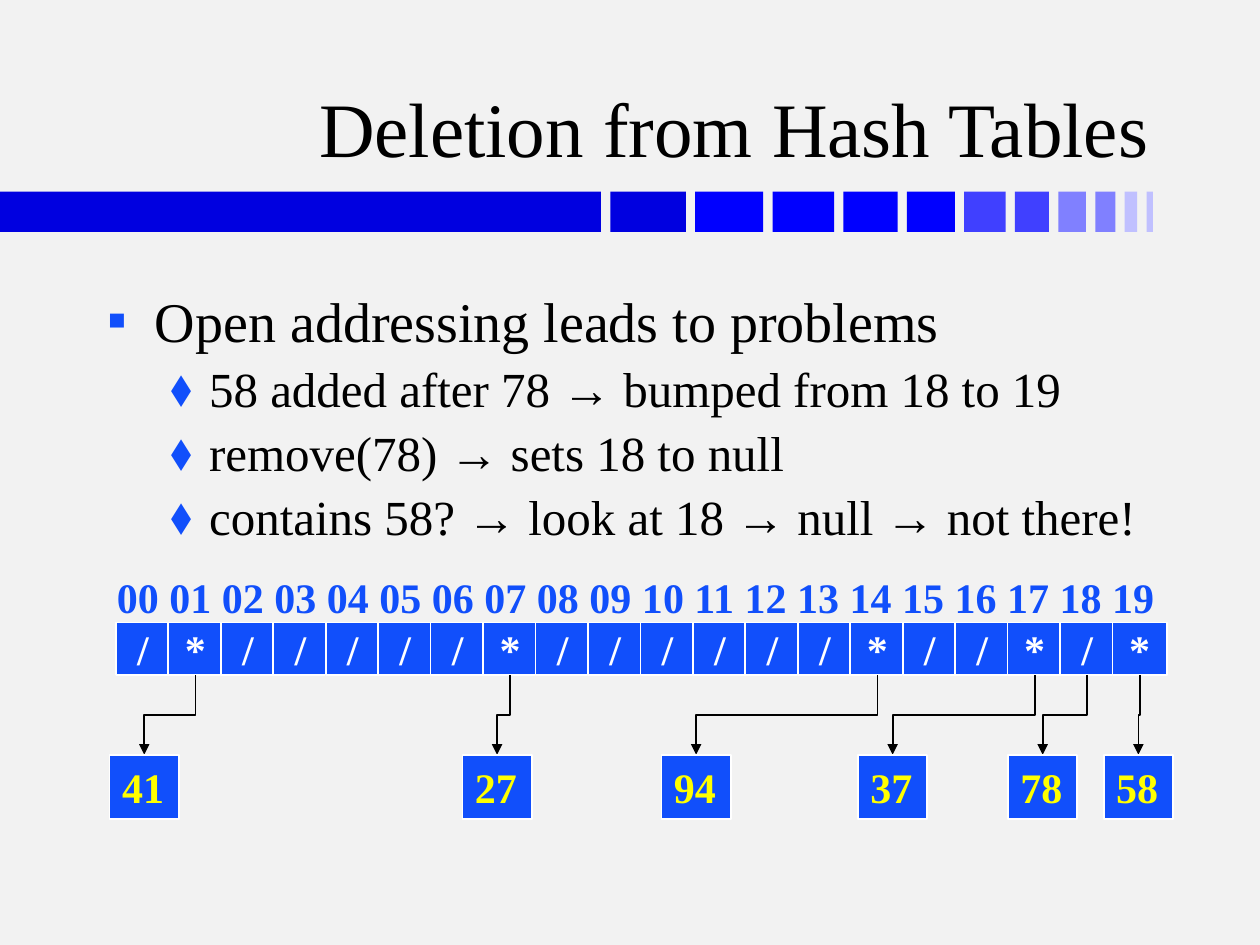
from dataclasses import dataclass

from lxml import etree
from pptx import Presentation
from pptx.dml.color import RGBColor
from pptx.enum.shapes import MSO_CONNECTOR, MSO_SHAPE
from pptx.enum.text import MSO_ANCHOR, MSO_AUTO_SIZE, PP_ALIGN
from pptx.oxml.ns import qn
from pptx.util import Inches, Pt

ELBOW = MSO_CONNECTOR.ELBOW
RECTANGLE = MSO_SHAPE.RECTANGLE
BOTTOM, MIDDLE = MSO_ANCHOR.BOTTOM, MSO_ANCHOR.MIDDLE
NO_FIT, GROW = MSO_AUTO_SIZE.NONE, MSO_AUTO_SIZE.SHAPE_TO_FIT_TEXT
LEFT, CENTER, RIGHT = PP_ALIGN.LEFT, PP_ALIGN.CENTER, PP_ALIGN.RIGHT


@dataclass(frozen=True)
class Theme:
    """Colours, typeface and type sizes of the slide."""
    face: str = "Times New Roman"
    background: str = "F2F2F2"
    text: str = "000000"
    accent: str = "114FFB"
    inverse: str = "FFFFFF"
    key: str = "FFFF00"
    band: tuple = ("0000E0", "0000E0", "0000FF", "0000FF", "0000FF", "0000FF",
                   "4040FF", "4040FF", "8080FF", "8080FF", "C0C0FF", "C0C0FF")
    title_size: int = 44
    body_sizes: tuple = (32, 28)
    table_size: int = 24
    line_width: int = 1


THEME = Theme()

BAND_WIDTHS = (4.77, 0.6, 0.54, 0.49, 0.43, 0.38, 0.33, 0.27, 0.22, 0.16, 0.1, 0.05)
BULLETS = (("▪", 0.38, 0.38), ("⬧", 0.81, 0.31))
POINTS = (
    (0, "Open addressing leads to problems"),
    (1, "58 added after 78 → bumped from 18 to 19"),
    (1, "remove(78) → sets 18 to null"),
    (1, "contains 58? → look at 18 → null → not there!"),
)
SLOT_COUNT = 20
CLEARED_SLOT = 18
KEYS = ((1, "41", 0.87), (7, "27", 3.67), (14, "94", 5.25),
        (17, "37", 6.81), (18, "78", 8), (19, "58", 8.76))


def style_font(paragraph, size, color, bold=False):
    """Apply the theme face with a size and colour to a paragraph."""
    font = paragraph.font
    font.name, font.size, font.bold = THEME.face, Pt(size), bold
    font.color.rgb = RGBColor.from_string(color)


def place(shape, left, top, width, height):
    """Move a placeholder to a box given in inches."""
    shape.left, shape.top = Inches(left), Inches(top)
    shape.width, shape.height = Inches(width), Inches(height)


def add_block(slide, left, top, width, height, fill):
    """Add a flat filled rectangle without an outline."""
    block = slide.shapes.add_shape(
        RECTANGLE, Inches(left), Inches(top), Inches(width), Inches(height))
    block.shadow.inherit = False
    block.fill.solid()
    block.fill.fore_color.rgb = RGBColor.from_string(fill)
    block.line.fill.background()
    return block


def add_cell(slide, left, top, width, height, label, color, align):
    """Add an outlined accent cell with a bold label."""
    cell = add_block(slide, left, top, width, height, THEME.accent)
    cell.line.color.rgb = RGBColor.from_string(THEME.inverse)
    cell.line.width = Pt(THEME.line_width)
    frame = cell.text_frame
    frame.word_wrap, frame.vertical_anchor = False, MIDDLE
    frame.text = label
    frame.paragraphs[0].alignment = align
    style_font(frame.paragraphs[0], THEME.table_size, color, bold=True)
    return cell


def add_drop_arrow(slide, start_x, start_y, end_x, end_y):
    """Add an elbow arrow that runs down, left and down again."""
    drop, shift = end_y - start_y, start_x - end_x
    center_x, center_y = (start_x + end_x) / 2, (start_y + end_y) / 2
    arrow = slide.shapes.add_connector(
        ELBOW,
        Inches(center_x - drop / 2), Inches(center_y - shift / 2),
        Inches(center_x + drop / 2), Inches(center_y + shift / 2))
    arrow.rotation = 90
    arrow.line.color.rgb = RGBColor.from_string(THEME.text)
    arrow.line.width = Pt(THEME.line_width)
    properties = arrow._element.spPr
    etree.SubElement(properties.find(qn("a:ln")), qn("a:tailEnd"), type="triangle")
    etree.SubElement(properties, qn("a:effectLst"))


def add_bullet(paragraph, level):
    """Give a paragraph the bullet and hanging indent of its level."""
    mark, margin, hanging = BULLETS[level]
    properties = paragraph._p.get_or_add_pPr()
    properties.set("marL", str(Inches(margin)))
    properties.set("indent", str(-Inches(hanging)))
    color = etree.SubElement(properties, qn("a:buClr"))
    etree.SubElement(color, qn("a:srgbClr"), val=THEME.accent)
    etree.SubElement(properties, qn("a:buFont"), typeface=THEME.face)
    etree.SubElement(properties, qn("a:buChar"), char=mark)


def add_band(slide, left, top, width, height):
    """Draw the fading row of blocks with equal gaps."""
    gap = (width - sum(BAND_WIDTHS)) / (len(BAND_WIDTHS) - 1)
    for block_width, fill in zip(BAND_WIDTHS, THEME.band):
        add_block(slide, left, top, block_width, height, fill)
        left += block_width + gap


def fill_title(slide, left, top, width, height):
    """Place the heading right-aligned above the band."""
    title = slide.shapes.title
    place(title, left, top, width, height)
    frame = title.text_frame
    frame.text = "Deletion from Hash Tables"
    frame.auto_size, frame.vertical_anchor = NO_FIT, BOTTOM
    frame.paragraphs[0].alignment = RIGHT
    style_font(frame.paragraphs[0], THEME.title_size, THEME.text)


def fill_body(slide, left, top, width, height):
    """Place the two-level list of points."""
    body = slide.placeholders[1]
    place(body, left, top, width, height)
    frame = body.text_frame
    frame.auto_size, frame.margin_top = NO_FIT, Inches(0.1)
    frame.text = "\n".join(text for _, text in POINTS)
    for paragraph, (level, _) in zip(frame.paragraphs, POINTS):
        paragraph.level = level
        paragraph.space_before = Pt(3 * level)
        add_bullet(paragraph, level)
        style_font(paragraph, THEME.body_sizes[level], THEME.text)


def add_hash_table(slide, left, top, width, height):
    """Draw slot numbers, slots, and the keys that slots point to."""
    slot_width, slot_height, slot_top = 0.43, 0.42, top + 0.45
    key_width, key_height = 0.55, 0.51
    key_top = top + height - key_height
    pitch = (width - slot_width) / (SLOT_COUNT - 1)
    pointing = {slot for slot, _, _ in KEYS} - {CLEARED_SLOT}

    for slot in range(SLOT_COUNT):
        add_cell(slide, left + slot * pitch, slot_top, slot_width, slot_height,
                 "*" if slot in pointing else "/", THEME.inverse, CENTER)

    numbers = slide.shapes.add_textbox(
        Inches(left - 0.09), Inches(top), Inches(width + 0.1), Inches(0.5))
    numbers.text_frame.word_wrap = False
    numbers.text_frame.auto_size = GROW
    numbers.text_frame.text = " ".join(f"{slot:02}" for slot in range(SLOT_COUNT))
    style_font(numbers.text_frame.paragraphs[0], THEME.table_size, THEME.accent, bold=True)

    for slot, key, key_left in KEYS:
        add_drop_arrow(slide, left + slot * pitch + slot_width / 2, slot_top + slot_height,
                       key_left + key_width / 2, key_top)
        cell = add_cell(slide, key_left, key_top, key_width, key_height,
                        key, THEME.key, LEFT)
        cell.text_frame.auto_size = GROW


def main():
    """Build the slide and save it."""
    deck = Presentation()
    deck.slide_width, deck.slide_height = Inches(10), Inches(7.5)
    slide = deck.slides.add_slide(deck.slide_layouts[1])
    slide.background.fill.solid()
    slide.background.fill.fore_color.rgb = RGBColor.from_string(THEME.background)
    add_band(slide, 0, 1.52, 9.15, 0.32)
    fill_title(slide, 0.74, 0.19, 8.48, 1.23)
    fill_body(slide, 0.75, 2.17, 8.5, 4.5)
    add_hash_table(slide, 0.92, 4.49, 8.34, 2.01)
    deck.save("out.pptx")


if __name__ == "__main__":
    main()
